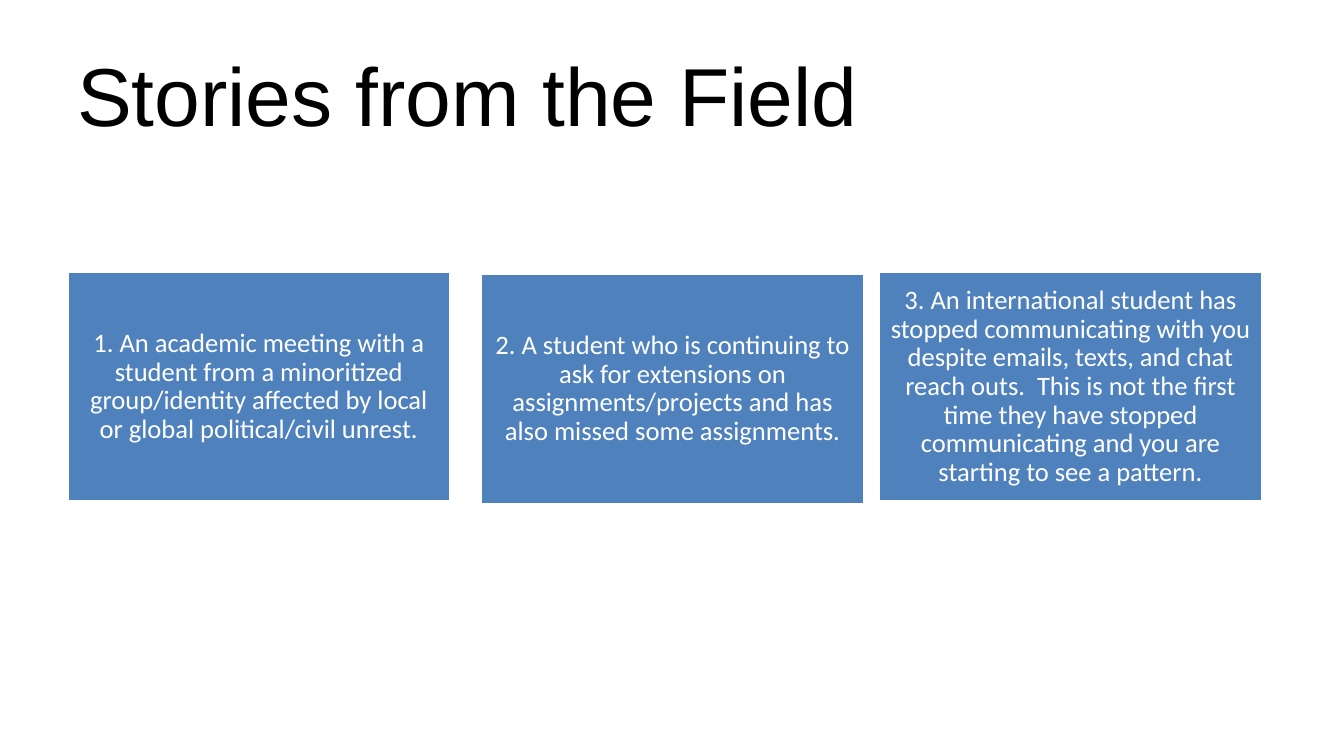
from dataclasses import dataclass

from pptx import Presentation
from pptx.dml.color import RGBColor
from pptx.enum.shapes import MSO_SHAPE
from pptx.enum.text import MSO_ANCHOR, PP_ALIGN
from pptx.util import Pt

RECTANGLE = MSO_SHAPE.RECTANGLE
MIDDLE = MSO_ANCHOR.MIDDLE
LEFT, CENTER = PP_ALIGN.LEFT, PP_ALIGN.CENTER

EMU_PER_PX = 9525  # 96 px to the inch
SLIDE_WIDTH, SLIDE_HEIGHT = 1280, 720
CARD_WIDTH, CARD_HEIGHT = 365, 219
CARD_INSET = 8

COLORS = {"title": "000000", "card": "4F81BD", "white": "FFFFFF"}
TITLE_FONT = {"name": "Arial", "size": Pt(58.7)}
CARD_FONT = {"name": "Calibri", "size": Pt(19)}


@dataclass
class Story:
    left: int
    top: int
    text: str


STORIES = [
    Story(64, 259, "1. An academic meeting with a student from a minoritized "
                   "group/identity affected by local or global political/civil unrest."),
    Story(458, 261, "2. A student who is continuing to ask for extensions on "
                    "assignments/projects and has also missed some assignments."),
    Story(837, 259, "3. An international student has stopped communicating with you "
                    "despite emails, texts, and chat reach outs.  This is not the first "
                    "time they have stopped communicating and you are starting to see "
                    "a pattern."),
]


def px(length: int) -> int:
    return length * EMU_PER_PX


def rgb(name: str) -> RGBColor:
    return RGBColor.from_string(COLORS[name])


def write_text(box, text: str, font: dict, color: str, align) -> None:
    frame = box.text_frame
    frame.word_wrap = True
    frame.vertical_anchor = MIDDLE
    para = frame.paragraphs[0]
    para.alignment = align
    span = para.add_run()
    span.text = text
    for attribute, value in font.items():
        setattr(span.font, attribute, value)
    span.font.color.rgb = rgb(color)


def add_title(page, text: str) -> None:
    box = page.shapes.add_textbox(px(64), px(29), px(1152), px(120))
    write_text(box, text, TITLE_FONT, "title", LEFT)


def add_card(page, story: Story) -> None:
    card = page.shapes.add_shape(RECTANGLE, px(story.left), px(story.top),
                                 px(CARD_WIDTH), px(CARD_HEIGHT))
    card.shadow.inherit = False
    card.fill.solid()
    card.fill.fore_color.rgb = rgb("card")
    card.line.color.rgb = rgb("white")
    card.line.width = Pt(2)
    for side in ("left", "top", "right", "bottom"):
        setattr(card.text_frame, f"margin_{side}", px(CARD_INSET))
    write_text(card, story.text, CARD_FONT, "white", CENTER)
    card.text_frame.paragraphs[0].line_spacing = 0.9


def main() -> None:
    deck = Presentation()
    deck.slide_width, deck.slide_height = px(SLIDE_WIDTH), px(SLIDE_HEIGHT)
    page = deck.slides.add_slide(deck.slide_layouts[6])

    # Title
    add_title(page, "Stories from the Field")

    # Story cards
    for story in STORIES:
        add_card(page, story)

    deck.save("out.pptx")


if __name__ == "__main__":
    main()
